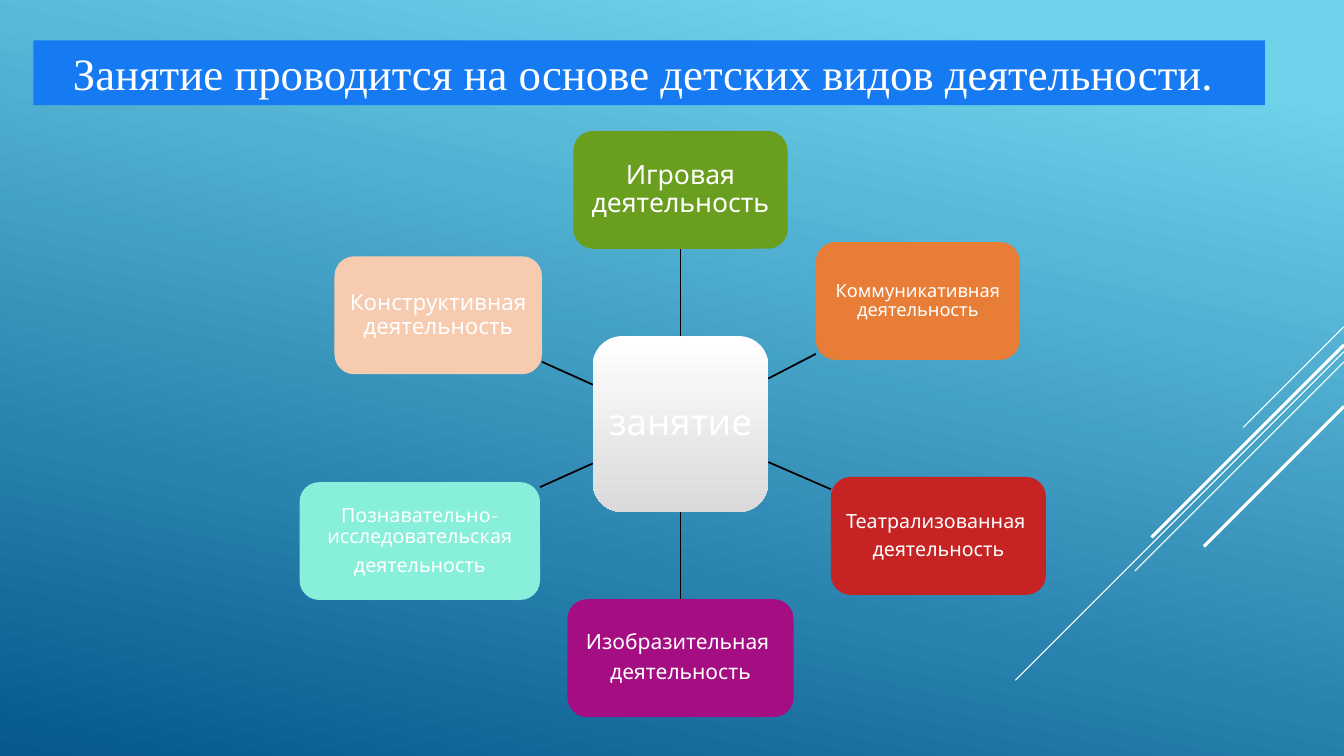
from lxml import etree
from pptx import Presentation
from pptx.dml.color import RGBColor
from pptx.enum.shapes import MSO_CONNECTOR, MSO_SHAPE
from pptx.enum.text import MSO_ANCHOR, PP_ALIGN
from pptx.oxml.ns import qn
from pptx.util import Cm, Pt

COLORS = {
    "sky": "6ED2EB", "deep": "06588E", "banner": "167BF3",
    "white": "FFFFFF", "silver": "DADADA", "black": "000000",
    "green": "6A9E1F", "orange": "E87D37", "red": "C62324",
    "purple": "A50E82", "mint": "87EFDA", "peach": "F6CBAF",
}
WIDTH, HEIGHT = 33.87, 19.05
TITLE = "Занятие проводится на основе детских видов деятельности. "
TITLE_BOX = (0.84, 1.02, 31.04, 1.63)
HUB_TEXT = "занятие"
HUB_BOX = (14.94, 8.47, 4.42, 4.43)
NODE_HEIGHT = 2.97
NODES = [
    (["Игровая деятельность"], 14.45, 3.3, 5.4, 19, "green"),
    (["Коммуникативная деятельность"], 20.56, 6.1, 5.14, 13, "orange"),
    (["Театрализованная ", "деятельность"], 20.94, 12.02, 5.42, 14, "red"),
    (["Изобразительная ", "деятельность"], 14.3, 15.1, 5.7, 15, "purple"),
    (["Познавательно-исследовательская", "деятельность"],
     7.55, 12.15, 6.06, 14, "mint"),
    (["Конструктивная деятельность"], 8.43, 6.46, 5.23, 16, "peach"),
]
HUB_SITES = {0: (0, 2), 3: (2, 0)}
STRIPES = [
    (8.23, 2.54, 0.75), (8.86, 8.28, 0.75), (9.12, 5.27, 0.75),
    (8.69, 4.85, 2.25), (10.24, 3.53, 2.25),
]


def rgb(name):
    return RGBColor.from_string(COLORS[name])


def set_gradient(fill, stops, angle):
    fill.gradient()
    fill.gradient_angle = angle
    for stop, (position, name) in zip(fill.gradient_stops, stops):
        stop.position = position
        stop.color.rgb = rgb(name)


def add_line(shapes, start, end, color, width):
    points = [Cm(v) for v in (*start, *end)]
    line = shapes.add_connector(MSO_CONNECTOR.STRAIGHT, *points)
    line.line.color.rgb = rgb(color)
    line.line.width = Pt(width)
    etree.SubElement(line._element.spPr, qn("a:effectLst"))
    return line


def write(sp, lines, size, font, frame, paragraph):
    tf = sp.text_frame
    for name, value in frame.items():
        setattr(tf, name, value)
    for i, text in enumerate(lines):
        p = tf.add_paragraph() if i else tf.paragraphs[0]
        for name, value in paragraph.items():
            setattr(p, name, value)
        r = p.add_run()
        r.text = text
        for name, value in {"size": Pt(size), "name": font}.items():
            setattr(r.font, name, value)
        r.font.color.rgb = rgb("white")


def add_box(shapes, box, lines, size):
    sp = shapes.add_shape(MSO_SHAPE.ROUNDED_RECTANGLE, *map(Cm, box))
    sp.shadow.inherit = False
    sp.line.fill.background()
    frame = {"word_wrap": True, "vertical_anchor": MSO_ANCHOR.MIDDLE}
    for side in ("left", "right", "top", "bottom"):
        frame["margin_" + side] = Cm(0.1)
    paragraph = {"alignment": PP_ALIGN.CENTER, "line_spacing": 0.9,
                 "space_after": Pt(round(0.35 * size, 1))}
    write(sp, lines, size, "Quicksand", frame, paragraph)
    return sp


def center(box):
    left, top, width, height = box
    return left + width / 2, top + height / 2


def edge_point(box, target):
    x, y = center(box)
    dx, dy = target[0] - x, target[1] - y
    scale = 1 / max(abs(dx) / (box[2] / 2), abs(dy) / (box[3] / 2))
    return x + dx * scale, y + dy * scale


def main():
    prs = Presentation()
    prs.slide_width, prs.slide_height = Cm(WIDTH), Cm(HEIGHT)
    s = prs.slides.add_slide(prs.slide_layouts[5])
    set_gradient(s.background.fill, [(0.1, "sky"), (1, "deep")], 258)

    title = s.shapes.title
    title.left, title.top, title.width, title.height = map(Cm, TITLE_BOX)
    title.fill.solid()
    title.fill.fore_color.rgb = rgb("banner")
    write(title, [TITLE], 32, "Times New Roman",
          {"word_wrap": True, "vertical_anchor": MSO_ANCHOR.MIDDLE},
          {"alignment": PP_ALIGN.CENTER})

    for top, length, width in STRIPES:
        add_line(s.shapes, (WIDTH, top), (WIDTH - length, top + length),
                 "white", width)

    hub = add_box(s.shapes, HUB_BOX, [HUB_TEXT], 26)
    set_gradient(hub.fill, [(0, "white"), (1, "silver")], 270)

    for i, (lines, left, top, width, size, color) in enumerate(NODES):
        box = (left, top, width, NODE_HEIGHT)
        node = add_box(s.shapes, box, lines, size)
        node.fill.solid()
        node.fill.fore_color.rgb = rgb(color)
        spoke = add_line(s.shapes, edge_point(HUB_BOX, center(box)),
                         edge_point(box, center(HUB_BOX)), "black", 1.25)
        if i in HUB_SITES:
            hub_site, node_site = HUB_SITES[i]
            spoke.begin_connect(hub, hub_site)
            spoke.end_connect(node, node_site)

    prs.save("out.pptx")


if __name__ == "__main__":
    main()
